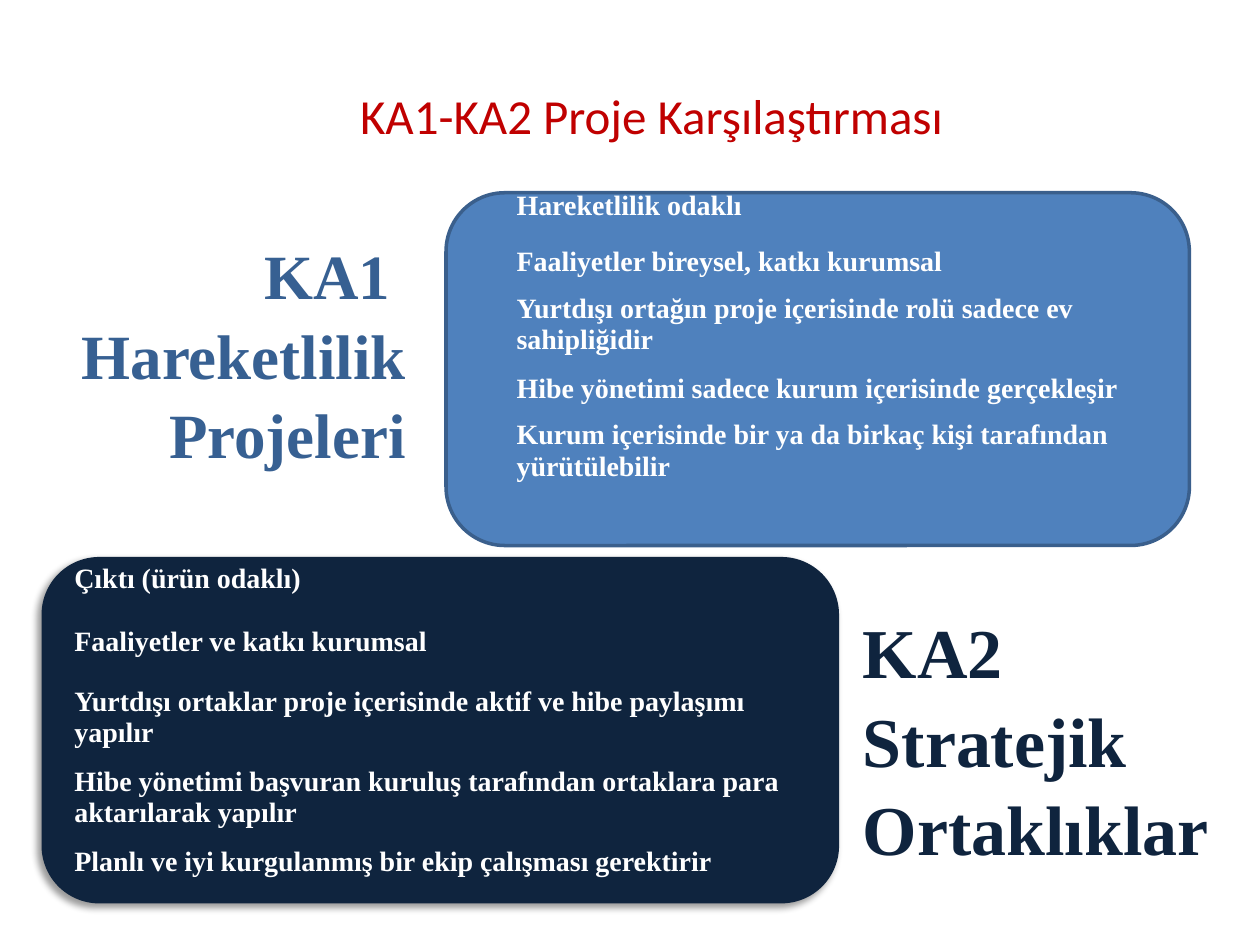
from dataclasses import dataclass

from lxml.etree import SubElement
from pptx import Presentation
from pptx.dml.color import RGBColor
from pptx.enum.shapes import MSO_SHAPE
from pptx.enum.text import MSO_ANCHOR, PP_ALIGN
from pptx.oxml.ns import qn
from pptx.util import Inches, Pt

COLUMNS, ROWS = 100, 75
PLAIN_TABLE = "{2D5ABB26-0587-4C30-8999-92F81FD0307C}"


@dataclass(frozen=True)
class Theme:
    red: str = "C00000"
    blue: str = "4F81BD"
    blue_edge: str = "3A5F8C"
    blue_text: str = "376092"
    navy: str = "0F243E"
    white: str = "FFFFFF"
    title_font: str = "Calibri"
    body_font: str = "Times New Roman"
    title_size: int = 28
    mobility_size: int = 36
    partnership_size: int = 40
    body_size: int = 16


class SlideBuilder:
    """Places styled elements on a grid of 100 columns by 75 rows."""

    def __init__(self, deck, theme):
        self.theme = theme
        self.slide = deck.slides.add_slide(deck.slide_layouts[6])
        self.column = deck.slide_width / COLUMNS
        self.row = deck.slide_height / ROWS

    def place(self, left, top, width, height):
        return (int(left * self.column), int(top * self.row),
                int(width * self.column), int(height * self.row))

    def style(self, para, font, size, color, bold):
        for span in para.runs:
            span.font.name = font
            span.font.size = Pt(size)
            span.font.bold = bold
            span.font.color.rgb = RGBColor.from_string(color)

    def panel(self, area, fill, edge=None, shadow=False):
        panel = self.slide.shapes.add_shape(
            MSO_SHAPE.ROUNDED_RECTANGLE, *self.place(*area))
        panel.shadow.inherit = False
        panel.fill.solid()
        panel.fill.fore_color.rgb = RGBColor.from_string(fill)
        if edge:
            panel.line.color.rgb = RGBColor.from_string(edge)
            panel.line.width = Pt(2)
        else:
            panel.line.fill.background()
        if shadow:
            effects = panel.element.spPr.find(qn("a:effectLst"))
            outer = SubElement(effects, qn("a:outerShdw"), blurRad=str(Pt(4)),
                               dist=str(Pt(3)), dir=str(135 * 60000),
                               algn="tr", rotWithShape="0")
            color = SubElement(outer, qn("a:srgbClr"), val="000000")
            SubElement(color, qn("a:alpha"), val="40000")

    def text(self, area, lines, size, color, font=None, bold=True,
             align=PP_ALIGN.LEFT, anchor=MSO_ANCHOR.TOP, spacing=1.05, wrap=False):
        frame = self.slide.shapes.add_textbox(*self.place(*area)).text_frame
        frame.word_wrap = wrap
        frame.vertical_anchor = anchor
        frame.text = "\n".join(lines)
        for para in frame.paragraphs:
            para.alignment = align
            para.line_spacing = spacing
            self.style(para, font or self.theme.body_font, size, color, bold)

    def table(self, area, heights, lines):
        frame = self.slide.shapes.add_table(len(lines), 1, *self.place(*area))
        frame.element.find(".//" + qn("a:tableStyleId")).text = PLAIN_TABLE
        table = frame.table
        table.first_row = table.horz_banding = False
        for row, height, line in zip(table.rows, heights, lines):
            row.height = int(height * self.row)
            cell = row.cells[0]
            cell.fill.background()
            cell.text = line
            self.style(cell.text_frame.paragraphs[0], self.theme.body_font,
                       self.theme.body_size, self.theme.white, True)


def main():
    deck = Presentation()
    deck.slide_width, deck.slide_height = Inches(10), Inches(7.5)
    theme = Theme()
    page = SlideBuilder(deck, theme)

    # Background panels
    page.panel((35.4, 15.3, 59, 28), theme.blue, edge=theme.blue_edge)
    page.panel((3.3, 44.2, 63.3, 27.5), theme.navy, shadow=True)

    # Title
    page.text((27.6, 5.8, 90, 6.7), ["KA1-KA2 Proje Karşılaştırması"],
              theme.title_size, theme.red, font=theme.title_font, bold=False,
              anchor=MSO_ANCHOR.MIDDLE, spacing=1, wrap=True)

    # KA1: heading and features
    page.text((5.2, 18, 28, 19.2), ["KA1 ", "Hareketlilik", "Projeleri"],
              theme.mobility_size, theme.blue_text, align=PP_ALIGN.RIGHT)
    page.table((40, 14.6, 50.8, 26.5), (4.5, 3.7, 6.3, 3.7, 7.2), [
        "Hareketlilik odaklı",
        "Faaliyetler bireysel, katkı kurumsal",
        "Yurtdışı ortağın proje içerisinde rolü sadece ev sahipliğidir",
        "Hibe yönetimi sadece kurum içerisinde gerçekleşir",
        "Kurum içerisinde bir ya da birkaç kişi tarafından yürütülebilir",
    ])

    # KA2: heading and features
    page.text((67.5, 47.5, 29.8, 21.2), ["KA2", "Stratejik", "Ortaklıklar"],
              theme.partnership_size, theme.navy)
    page.table((4.9, 44.2, 58.4, 28.8), (5, 4.8, 6.3, 6.3, 5.7), [
        "Çıktı (ürün odaklı)",
        "Faaliyetler ve katkı kurumsal",
        "Yurtdışı ortaklar proje içerisinde aktif ve hibe paylaşımı yapılır",
        "Hibe yönetimi başvuran kuruluş tarafından ortaklara para "
        "aktarılarak yapılır",
        "Planlı ve iyi kurgulanmış bir ekip çalışması gerektirir",
    ])

    deck.save("out.pptx")


if __name__ == "__main__":
    main()
